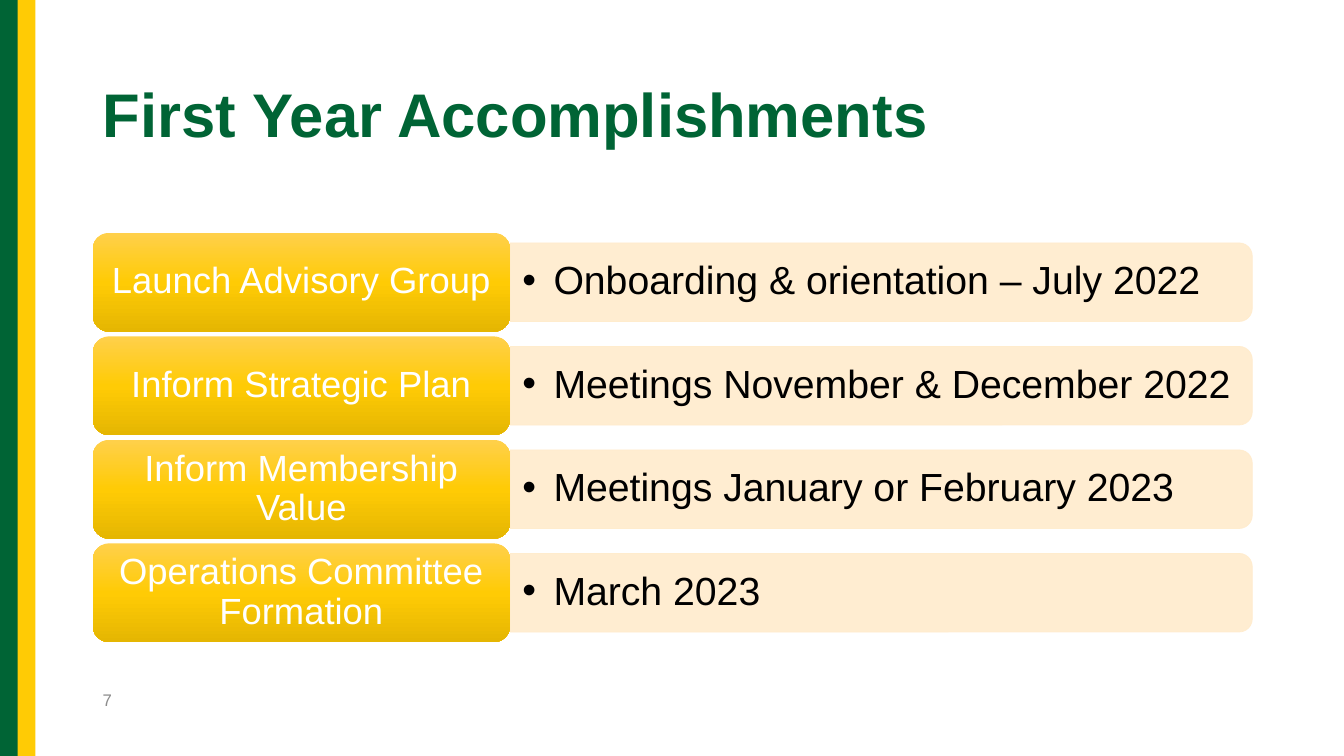
from dataclasses import dataclass

from lxml.etree import SubElement
from pptx import Presentation
from pptx.dml.color import RGBColor as Rgb
from pptx.enum.shapes import MSO_SHAPE as Form
from pptx.enum.text import MSO_ANCHOR as Anchor, PP_ALIGN as Align
from pptx.oxml import parse_xml
from pptx.oxml.ns import nsdecls, qn
from pptx.util import Inches, Pt


@dataclass(frozen=True)
class Theme:
    """Colours and type sizes of the slide."""
    font: str = "Arial"
    green: str = "006435"
    gold: str = "FFCB05"
    cream: str = "FFECCC"
    gray: str = "8C8C8C"
    black: str = "000000"
    white: str = "FFFFFF"
    ramp: tuple = ((0, "FFD04B"), (50, "FFCB05"), (100, "E5B602"))
    head: int = 44
    body: int = 28
    label: int = 26
    foot: int = 12


THEME = Theme()
ROWS = (
    ("Launch Advisory Group", "Onboarding & orientation – July 2022"),
    ("Inform Strategic Plan", "Meetings November & December 2022"),
    ("Inform Membership Value", "Meetings January or February 2023"),
    ("Operations Committee Formation", "March 2023"),
)


def add_form(slide, form, box, color):
    """Add a flat shape without outline or shadow."""
    shape = slide.shapes.add_shape(form, *map(Inches, box))
    shape.shadow.inherit = False
    shape.fill.solid()
    shape.fill.fore_color.rgb = Rgb.from_string(color)
    shape.line.fill.background()
    return shape


def set_text(shape, text, size, color, inset=(0.1, 0.05), bold=False):
    """Fill a shape with one styled paragraph and return it."""
    frame = shape.text_frame
    frame.word_wrap = True
    frame.vertical_anchor = Anchor.MIDDLE
    frame.margin_left = frame.margin_right = Inches(inset[0])
    frame.margin_top = frame.margin_bottom = Inches(inset[1])
    frame.text = text
    para = frame.paragraphs[0]
    para.alignment = Align.LEFT
    para.line_spacing = 0.9
    font = para.runs[0].font
    font.name, font.size, font.bold = THEME.font, Pt(size), bold
    font.color.rgb = Rgb.from_string(color)
    return para


def add_text(slide, box, *args, **style):
    """Add a text box and return its paragraph."""
    return set_text(slide.shapes.add_textbox(*map(Inches, box)), *args, **style)


def add_bullet(para, indent):
    """Give a paragraph a hanging round bullet."""
    props = para._p.get_or_add_pPr()
    props.set("marL", str(Inches(indent)))
    props.set("indent", str(-Inches(indent)))
    SubElement(props, qn("a:buFont"), typeface=THEME.font)
    SubElement(props, qn("a:buChar"), char="•")


def add_ramp(shape):
    """Replace a shape's fill by the vertical gold gradient."""
    stops = "".join(
        f'<a:gs pos="{pos * 1000}"><a:srgbClr val="{color}"/></a:gs>'
        for pos, color in THEME.ramp)
    props = shape._element.spPr
    props.replace(props.find(qn("a:solidFill")), parse_xml(
        f'<a:gradFill {nsdecls("a")} rotWithShape="1"><a:gsLst>{stops}</a:gsLst>'
        '<a:lin ang="5400000" scaled="0"/></a:gradFill>'))


def add_panel(slide, box, text):
    """Draw the cream panel, rounded on its right, with its bullet."""
    left, top, width, height = box
    turned = (left + (width - height) / 2, top + (height - width) / 2, height, width)
    panel = add_form(slide, Form.ROUND_2_SAME_RECTANGLE, turned, THEME.cream)
    panel.rotation = 90
    panel.line.color.rgb = Rgb.from_string(THEME.cream)
    panel.line.width = Pt(0.5)
    for color in panel._element.spPr.iter(qn("a:srgbClr")):
        SubElement(color, qn("a:alpha"), val="90000")
    para = add_text(slide, (left, top + 0.04, width - 0.04, height - 0.08), text,
                    THEME.body, THEME.black, inset=(0.12, 0.06))
    add_bullet(para, 0.31)


def add_label(slide, box, text):
    """Draw the gold label of a row."""
    label = add_form(slide, Form.ROUNDED_RECTANGLE, box, THEME.gold)
    add_ramp(label)
    para = set_text(label, text, THEME.label, THEME.white, inset=(0.11, 0.05))
    para.alignment = Align.CENTER


def add_rows(slide, box):
    """Stack the rows evenly in a box."""
    left, top, width, height = box
    wide, tall = 0.36 * width, 0.98
    step = (height - tall) / (len(ROWS) - 1)
    for i, (name, note) in enumerate(ROWS):
        y = top + i * step
        add_panel(slide, (left + wide, y + 0.1, width - wide, tall - 0.2), note)
        add_label(slide, (left, y, wide, tall), name)


def add_bands(slide, box):
    """Draw the green and gold bands along the left edge."""
    left, top, width, height = box
    half = width / 2
    add_form(slide, Form.RECTANGLE, (left, top, half + 0.04, height), THEME.green)
    add_form(slide, Form.RECTANGLE, (left + half, top, half, height), THEME.gold)


def main():
    """Build and save the slide."""
    deck = Presentation()
    deck.slide_width, deck.slide_height = Inches(13.33), Inches(7.5)
    slide = deck.slides.add_slide(deck.slide_layouts[6])
    add_bands(slide, (0, 0, 0.35, 7.5))
    add_text(slide, (0.92, 0.44, 11.5, 1.45), "First Year Accomplishments",
             THEME.head, THEME.green, bold=True)
    add_rows(slide, (0.92, 2.31, 11.5, 4.06))
    add_text(slide, (0.92, 6.76, 3, 0.4), "7", THEME.foot, THEME.gray)
    deck.save("out.pptx")


if __name__ == "__main__":
    main()
